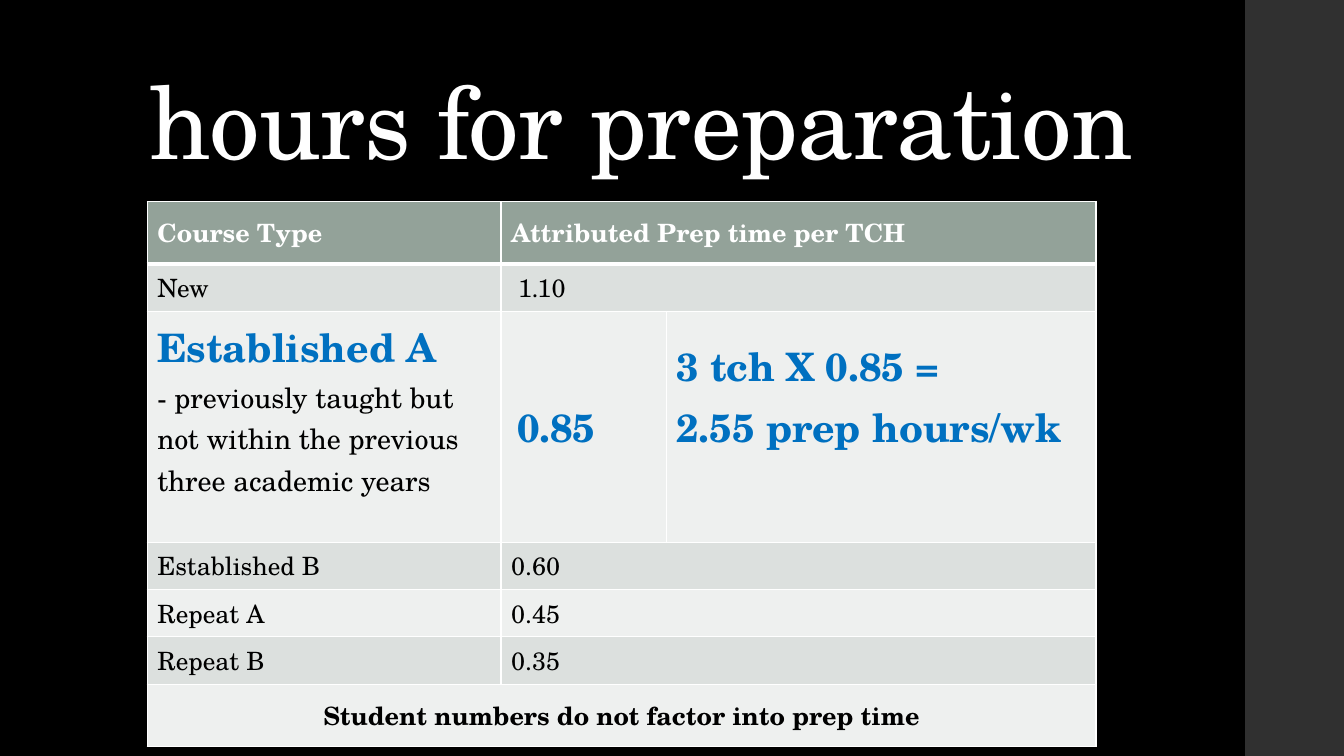
import pptx
import pptx.util
import pptx.dml.color
import pptx.enum.shapes
import pptx.enum.text
import pptx.oxml
import pptx.oxml.ns
from pptx.util import Inches

FONT = "TeX Gyre Schola"
COLORS = {"background": "000000", "sidebar": "303030", "white": "FFFFFF",
          "black": "000000", "blue": "0070C0", "header": "93A299",
          "band": "DCE0DE", "light": "EEF0EF"}

# Content: each cell is a list of paragraphs, each a (text, format) pair
TITLE = "hours for preparation"
HEAD = dict(bold=True, color="white")
KEY = dict(size=28, bold=True, color="blue")
NOTE = dict(bold=True, align="CENTER")
ROWS = [
    [[("Course Type", HEAD)], [("Attributed Prep time per TCH", HEAD)]],
    [[("New", {})], [(" 1.10", {})]],
    [[("Established A", KEY),
      ("- previously taught but not within the previous three academic years", dict(size=20))],
     [("0.85", KEY)],
     [("3 tch X 0.85 =", KEY), ("2.55 prep hours/wk", KEY)]],
    [[("Established B", {})], [("0.60", {})]],
    [[("Repeat A", {})], [("0.45", {})]],
    [[("Repeat B", {})], [("0.35", {})]],
    [[("Student numbers do not factor into prep time", NOTE)]],
]
COL_WIDTHS = [3.51, 1.64, 4.26]
ROW_HEIGHTS = [0.62, 0.47, 2.29, 0.47, 0.47, 0.47, 0.62]
EXAMPLE_ROW = 2
EXAMPLE_LEFT = [0.1, 0.16, 0.1]
EXAMPLE_BOTTOM = [0.42, 0.05, 0.65]


def rgb(name):
    return pptx.dml.color.RGBColor.from_string(COLORS[name])


def add_text(p, text, size=18, bold=False, color="black", align="LEFT"):
    p.alignment = getattr(pptx.enum.text.PP_ALIGN, align)
    r = p.add_run()
    r.text = text
    r.font.name = FONT
    r.font.size = pptx.util.Pt(size)
    r.font.bold = bold
    r.font.color.rgb = rgb(color)
    return r


def set_borders(cell, widths):
    """Draw white cell borders; widths maps lnL, lnR, lnT, lnB to points."""
    tcPr = cell._tc.get_or_add_tcPr()
    for i, (tag, width) in enumerate(widths.items()):
        tcPr.insert(i, pptx.oxml.parse_xml(
            f'<a:{tag} {pptx.oxml.ns.nsdecls("a")} w="{pptx.util.Pt(width)}">'
            f'<a:solidFill><a:srgbClr val="{COLORS["white"]}"/></a:solidFill></a:{tag}>'))


prs = pptx.Presentation()
prs.slide_width, prs.slide_height = Inches(13.33), Inches(7.5)
s = prs.slides.add_slide(prs.slide_layouts[6])
s.background.fill.solid()
s.background.fill.fore_color.rgb = rgb("background")

# Sidebar
sp = s.shapes.add_shape(pptx.enum.shapes.MSO_SHAPE.RECTANGLE,
                        Inches(12.35), 0, Inches(0.98), Inches(7.5))
sp.shadow.inherit = False
sp.fill.solid()
sp.fill.fore_color.rgb = rgb("sidebar")
sp.line.fill.background()

# Title
tf = s.shapes.add_textbox(Inches(1.38), Inches(0.4), Inches(10.6), Inches(1.45)).text_frame
tf.word_wrap = True
tf.vertical_anchor = pptx.enum.text.MSO_ANCHOR.BOTTOM
tf.paragraphs[0].line_spacing = 0.9
r = add_text(tf.paragraphs[0], TITLE, size=72, color="white")
r.font._element.set("spc", "-50")

# Table frame
table = s.shapes.add_table(len(ROWS), len(COL_WIDTHS), Inches(1.46), Inches(2),
                           Inches(sum(COL_WIDTHS)), Inches(sum(ROW_HEIGHTS))).table
table.first_row = table.horz_banding = False
for col, width in zip(table.columns, COL_WIDTHS):
    col.width = Inches(width)
for row, height in zip(table.rows, ROW_HEIGHTS):
    row.height = Inches(height)

# Table cells: the last cell of a short row spans the remaining columns
last = len(COL_WIDTHS) - 1
for i, row in enumerate(ROWS):
    fill = "header" if i == 0 else "band" if i % 2 else "light"
    for j in range(last + 1):
        cell = table.cell(i, j)
        cell.fill.solid()
        cell.fill.fore_color.rgb = rgb(fill)
        set_borders(cell, dict(lnL=1, lnR=1, lnT=3 if i == 1 else 1, lnB=3 if i == 0 else 1))
    if len(row) <= last:
        table.cell(i, len(row) - 1).merge(table.cell(i, last))
    for j, paragraphs in enumerate(row):
        cell = table.cell(i, j)
        cell.vertical_anchor = pptx.enum.text.MSO_ANCHOR.MIDDLE
        if i == EXAMPLE_ROW:
            cell.margin_left = Inches(EXAMPLE_LEFT[j])
            cell.margin_bottom = Inches(EXAMPLE_BOTTOM[j])
        tf = cell.text_frame
        for k, (text, style) in enumerate(paragraphs):
            add_text(tf.add_paragraph() if k else tf.paragraphs[0], text, **style)

prs.save("out.pptx")
